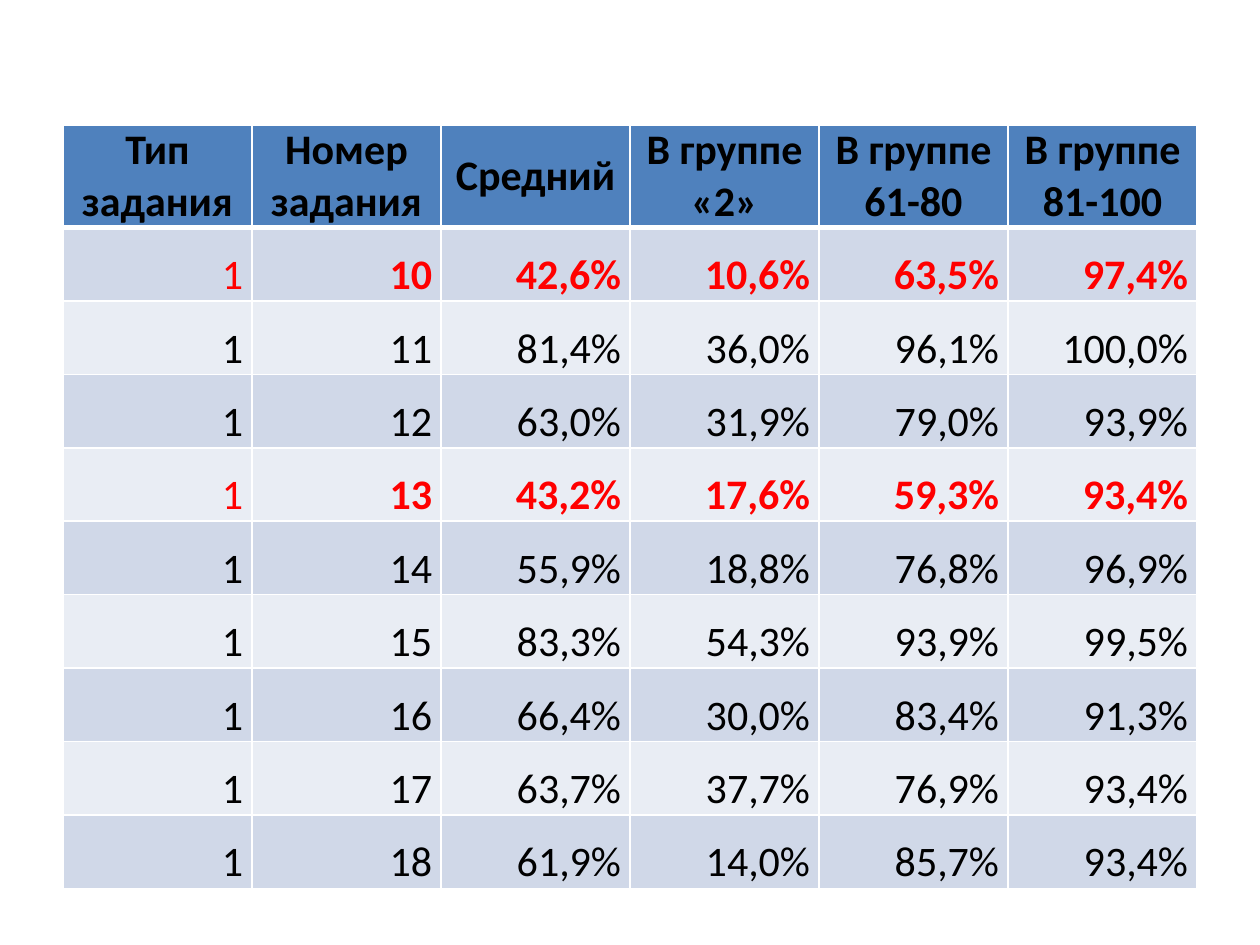
from lxml import etree
from pptx import Presentation
from pptx import util as u
from pptx.dml.color import RGBColor
from pptx.enum import text
from pptx.oxml.ns import qn

COLORS = {
    "header": "4F81BD",
    "odd": "D0D8E8",
    "even": "E9EDF4",
    "border": "FFFFFF",
    "text": "000000",
    "weak": "FF0000",
}
HEADERS = ["Тип задания", "Номер задания", "Средний",
           "В группе «2»", "В группе 61-80", "В группе 81-100"]
RESULTS = [
    ["1", "10", "42,6%", "10,6%", "63,5%", "97,4%"],
    ["1", "11", "81,4%", "36,0%", "96,1%", "100,0%"],
    ["1", "12", "63,0%", "31,9%", "79,0%", "93,9%"],
    ["1", "13", "43,2%", "17,6%", "59,3%", "93,4%"],
    ["1", "14", "55,9%", "18,8%", "76,8%", "96,9%"],
    ["1", "15", "83,3%", "54,3%", "93,9%", "99,5%"],
    ["1", "16", "66,4%", "30,0%", "83,4%", "91,3%"],
    ["1", "17", "63,7%", "37,7%", "76,9%", "93,4%"],
    ["1", "18", "61,9%", "14,0%", "85,7%", "93,4%"],
]
WEAK_TASKS = {"10", "13"}
COL_W, ROW_H = u.Cm(3.81), u.Cm(1.48)


def write(cell, value, color="text", bold=False, align="RIGHT", anchor="BOTTOM"):
    cell.vertical_anchor = getattr(text.MSO_ANCHOR, anchor)
    cell.margin_left = cell.margin_right = u.Cm(0.18)
    cell.margin_top = cell.margin_bottom = 0
    p = cell.text_frame.paragraphs[0]
    p.alignment = getattr(text.PP_ALIGN, align)
    r = p.add_run()
    r.text = value
    r.font.name = "Calibri"
    r.font.size = u.Pt(24)
    r.font.bold = bold
    r.font.color.rgb = RGBColor.from_string(COLORS[color])


def paint(cell, fill, top=1, bottom=1):
    cell.fill.solid()
    cell.fill.fore_color.rgb = RGBColor.from_string(COLORS[fill])
    tcPr = cell._tc.get_or_add_tcPr()
    sides = {"lnL": 1, "lnR": 1, "lnT": top, "lnB": bottom}
    for i, (side, width) in enumerate(sides.items()):
        ln = etree.Element(qn(f"a:{side}"), w=str(u.Pt(width)))
        solid = etree.SubElement(ln, qn("a:solidFill"))
        etree.SubElement(solid, qn("a:srgbClr"), val=COLORS["border"])
        tcPr.insert(i, ln)


prs = Presentation()
prs.slide_width, prs.slide_height = u.Cm(25.4), u.Cm(19.05)
s = prs.slides.add_slide(prs.slide_layouts[6])

n_rows, n_cols = len(RESULTS) + 1, len(HEADERS)
table = s.shapes.add_table(n_rows, n_cols, u.Cm(1.27), u.Cm(2.52),
                           COL_W * n_cols, ROW_H * n_rows).table
for col in table.columns:
    col.width = COL_W
for row in table.rows:
    row.height = ROW_H

for j, header in enumerate(HEADERS):
    cell = table.cell(0, j)
    write(cell, header, bold=True, align="CENTER", anchor="MIDDLE")
    paint(cell, "header", bottom=3)

for i, result in enumerate(RESULTS, start=1):
    weak = result[1] in WEAK_TASKS
    for j, value in enumerate(result):
        cell = table.cell(i, j)
        write(cell, value, color="weak" if weak else "text", bold=weak and j > 0)
        paint(cell, "odd" if i % 2 else "even", top=3 if i == 1 else 1)

prs.save("out.pptx")
